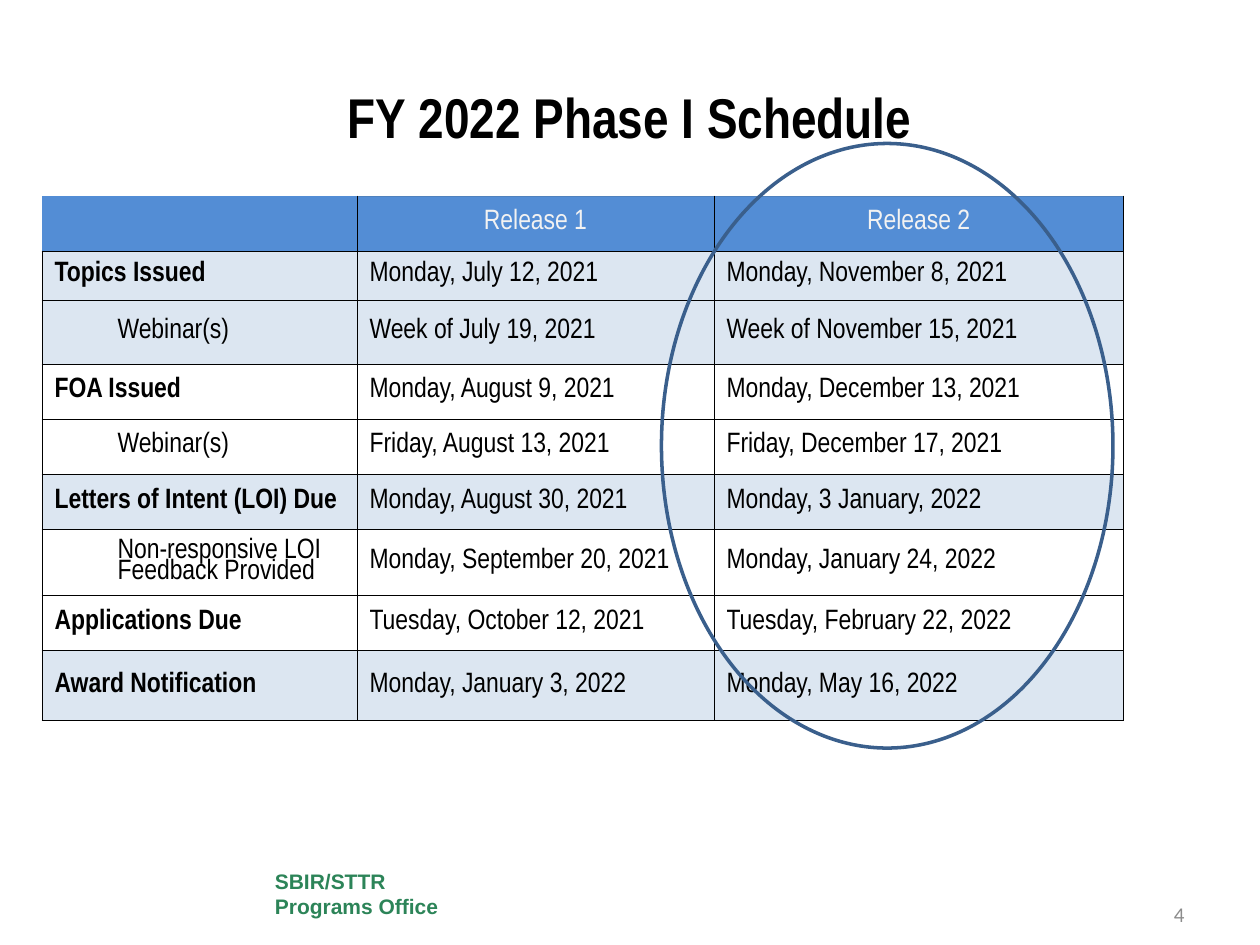
"""Build the FY 2022 Phase I schedule slide."""
from typing import NamedTuple

from lxml import etree
from pptx import Presentation
from pptx.dml.color import RGBColor
from pptx.enum.shapes import MSO_SHAPE
from pptx.enum.text import MSO_ANCHOR, PP_ALIGN
from pptx.oxml.ns import qn
from pptx.util import Pt

LEFT, CENTER, RIGHT = PP_ALIGN.LEFT, PP_ALIGN.CENTER, PP_ALIGN.RIGHT
MIDDLE = MSO_ANCHOR.MIDDLE
RECTANGLE, CONNECTOR_CIRCLE = MSO_SHAPE.RECTANGLE, MSO_SHAPE.FLOWCHART_CONNECTOR

COLORS = {
    "black": "000000",
    "white": "FFFFFF",
    "header": "538DD5",
    "header_text": "F2F2F2",
    "header_top": "4F81BD",
    "band": "DCE6F1",
    "office": "2C8458",
    "number": "8C8C8C",
    "circle": "3A5F8C",
}
TABLE_FONT = "Arial Narrow"
COLUMN_WIDTHS = (180, 204, 234)
INSET, INDENT = 7.2, 36


class Box(NamedTuple):
    """Position and size in points."""

    left: float
    top: float
    width: float
    height: float


class TextStyle(NamedTuple):
    """Font and alignment of one paragraph."""

    font: str
    size: float
    color: str
    bold: bool = False
    alignment: PP_ALIGN = LEFT


class Milestone(NamedTuple):
    """One schedule row below the header."""

    label: str
    first_release: str
    second_release: str
    height: float = 31.5
    banded: bool = False
    indented: bool = False


MILESTONES = (
    Milestone("Topics Issued", "Monday, July 12, 2021", "Monday, November 8, 2021", 28, banded=True),
    Milestone("Webinar(s)", "Week of July 19, 2021", "Week of November 15, 2021", 36.5,
              banded=True, indented=True),
    Milestone("FOA Issued", "Monday, August 9, 2021", "Monday, December 13, 2021"),
    Milestone("Webinar(s)", "Friday, August 13, 2021", "Friday, December 17, 2021", indented=True),
    Milestone("Letters of Intent (LOI) Due", "Monday, August 30, 2021", "Monday, 3 January, 2022",
              banded=True),
    Milestone("Non-responsive LOI Feedback Provided", "Monday, September 20, 2021",
              "Monday, January 24, 2022", 37, indented=True),
    Milestone("Applications Due", "Tuesday, October 12, 2021", "Tuesday, February 22, 2022"),
    Milestone("Award Notification", "Monday, January 3, 2022", "Monday, May 16, 2022", 40, banded=True),
)
HEADER_HEIGHT = 31.5


def rgb(name: str) -> RGBColor:
    """Look up a named colour."""
    return RGBColor.from_string(COLORS[name])


def lengths(box: Box) -> list[Pt]:
    """Convert a box to lengths."""
    return [Pt(value) for value in box]


def write(text_frame, text: str, style: TextStyle):
    """Write one styled paragraph and return it."""
    text_frame.word_wrap = True
    paragraph = text_frame.paragraphs[0]
    paragraph.text = text
    paragraph.alignment = style.alignment
    font = paragraph.font
    font.name, font.size, font.bold = style.font, Pt(style.size), style.bold
    font.color.rgb = rgb(style.color)
    return paragraph


def add_text(slide, box: Box, text: str, style: TextStyle):
    """Add a vertically centred text box and return its text frame."""
    text_frame = slide.shapes.add_textbox(*lengths(box)).text_frame
    text_frame.vertical_anchor = MIDDLE
    write(text_frame, text, style)
    return text_frame


def add_office(slide) -> None:
    """Add the office name on its white plate."""
    shape = slide.shapes.add_shape(RECTANGLE, *lengths(Box(150, 493, 114, 35)))
    shape.shadow.inherit = False
    shape.fill.solid()
    shape.fill.fore_color.rgb = rgb("white")
    shape.line.fill.background()
    shape.text_frame.vertical_anchor = MIDDLE
    write(shape.text_frame, "SBIR/STTR Programs Office", TextStyle("Arial", 12, "office", True))


def set_borders(cell, borders: dict[str, str | None]) -> None:
    """Give each named side a thin line, or none."""
    properties = cell._tc.get_or_add_tcPr()
    for side in ("L", "R", "T", "B"):
        line = etree.SubElement(properties, qn(f"a:ln{side}"), w=str(Pt(0.5)))
        color = borders.get(side, "black")
        if color is None:
            etree.SubElement(line, qn("a:noFill"))
        else:
            fill = etree.SubElement(line, qn("a:solidFill"))
            etree.SubElement(fill, qn("a:srgbClr"), val=COLORS[color])


def fill_cell(cell, text: str, style: TextStyle, fill: str | None,
              borders: dict[str, str | None], indent: float = 0) -> None:
    """Style one table cell and write its text."""
    set_borders(cell, borders)
    if fill:
        cell.fill.solid()
        cell.fill.fore_color.rgb = rgb(fill)
    else:
        cell.fill.background()
    cell.vertical_anchor = MIDDLE
    cell.margin_left = Pt(INSET + indent)
    write(cell.text_frame, text, style).line_spacing = 0.8


def add_schedule(slide) -> None:
    """Add the schedule table."""
    heights = [HEADER_HEIGHT] + [milestone.height for milestone in MILESTONES]
    box = Box(24, 112, sum(COLUMN_WIDTHS), sum(heights))
    table = slide.shapes.add_table(len(heights), len(COLUMN_WIDTHS), *lengths(box)).table
    table.first_row = table.horz_banding = False
    for column, width in zip(table.columns, COLUMN_WIDTHS):
        column.width = Pt(width)
    for row, height in zip(table.rows, heights):
        row.height = Pt(height)

    header_style = TextStyle(TABLE_FONT, 16, "header_text", alignment=CENTER)
    for index, title in enumerate(("", "Release 1", "Release 2")):
        borders = {"T": "header_top"} if title else {"L": None, "T": None}
        fill_cell(table.cell(0, index), title, header_style, "header", borders)

    date_style = TextStyle(TABLE_FONT, 16, "black")
    for row_index, milestone in enumerate(MILESTONES, 1):
        fill = "band" if milestone.banded else None
        label_style = date_style._replace(bold=not milestone.indented)
        fill_cell(table.cell(row_index, 0), milestone.label, label_style, fill, {},
                  INDENT if milestone.indented else 0)
        for index, date in enumerate((milestone.first_release, milestone.second_release), 1):
            fill_cell(table.cell(row_index, index), date, date_style, fill, {})


def add_circle(slide) -> None:
    """Circle the second release."""
    shape = slide.shapes.add_shape(CONNECTOR_CIRCLE, *lengths(Box(378, 82, 258, 345.5)))
    shape.shadow.inherit = False
    shape.fill.background()
    shape.line.color.rgb = rgb("circle")
    shape.line.width = Pt(2)


def main() -> None:
    """Build and save the presentation."""
    presentation = Presentation()
    presentation.slide_width, presentation.slide_height = Pt(720), Pt(540)
    slide = presentation.slides.add_slide(presentation.slide_layouts[6])
    add_office(slide)
    add_text(slide, Box(36, 21.6, 648, 90), "FY 2022 Phase I Schedule",
             TextStyle(TABLE_FONT, 32, "black", True, CENTER))
    number = add_text(slide, Box(516, 500.5, 168, 29), "4",
                      TextStyle("Calibri", 12, "number", alignment=RIGHT))
    number.margin_top, number.margin_bottom = Pt(14.5), Pt(0)
    add_schedule(slide)
    add_circle(slide)
    presentation.save("out.pptx")


if __name__ == "__main__":
    main()
